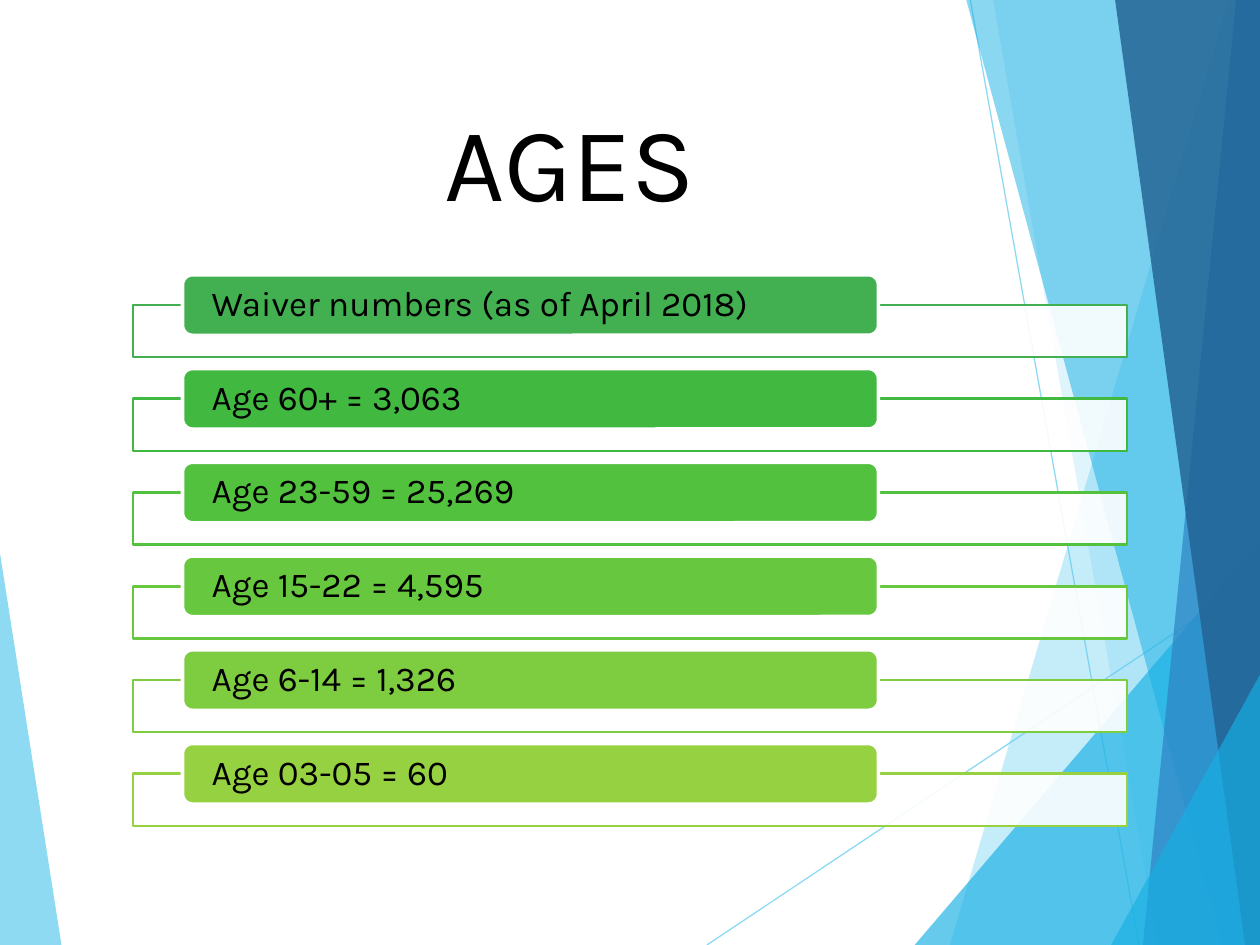
from lxml.etree import SubElement
from pptx import Presentation
from pptx.dml.color import RGBColor
from pptx.enum.shapes import MSO_CONNECTOR, MSO_SHAPE
from pptx.enum.text import MSO_ANCHOR, PP_ALIGN
from pptx.oxml.ns import qn
from pptx.util import Cm, Pt

WHITE = RGBColor(0xFF, 0xFF, 0xFF)
BLACK = RGBColor(0x00, 0x00, 0x00)
SKY = RGBColor(0x5F, 0xCB, 0xEF)
CYAN = RGBColor(0x17, 0xB0, 0xE4)
BLUE = RGBColor(0x2E, 0x83, 0xC3)
NAVY = RGBColor(0x22, 0x62, 0x92)

RIGHT, BOTTOM = 25.4, 19.05
ROW_STEP = 1.89

AGE_ROWS = [
    ("Waiver numbers (as of April 2018)", RGBColor(0x42, 0xB0, 0x51)),
    ("Age 60+ = 3,063", RGBColor(0x41, 0xB9, 0x40)),
    ("Age 23-59 = 25,269", RGBColor(0x52, 0xC1, 0x3E)),
    ("Age 15-22 = 4,595", RGBColor(0x67, 0xC7, 0x3E)),
    ("Age 6-14 = 1,326", RGBColor(0x7E, 0xCC, 0x40)),
    ("Age 03-05 = 60", RGBColor(0x96, 0xD1, 0x41)),
]


def set_opacity(color_format, percent):
    color = color_format._xFill.find(qn("a:srgbClr"))
    SubElement(color, qn("a:alpha")).set("val", str(percent * 1000))


def paint(shape, color, opacity=100, outline=None, weight=1):
    shape.shadow.inherit = False
    shape.fill.solid()
    shape.fill.fore_color.rgb = color
    if opacity < 100:
        set_opacity(shape.fill.fore_color, opacity)
    if outline is None:
        shape.line.fill.background()
    else:
        shape.line.color.rgb = outline
        shape.line.width = Pt(weight)


def write_text(shape, text, size, left_inset, right_inset, spacing=1.0):
    frame = shape.text_frame
    frame.word_wrap = True
    frame.vertical_anchor = MSO_ANCHOR.MIDDLE
    frame.margin_left, frame.margin_right = Cm(left_inset), Cm(right_inset)
    frame.margin_top = frame.margin_bottom = 0
    paragraph = frame.paragraphs[0]
    paragraph.alignment = PP_ALIGN.LEFT
    paragraph.line_spacing = spacing
    run = paragraph.add_run()
    run.text = text
    run.font.name = "Karla"
    run.font.size = Pt(size)
    run.font.color.rgb = BLACK


def add_facet(slide, corners, color, opacity):
    start, *others = [(Cm(x), Cm(y)) for x, y in corners]
    outline = slide.shapes.build_freeform(*start)
    outline.add_line_segments(others, close=True)
    paint(outline.convert_to_shape(), color, opacity)


def add_band(slide, top_x, bottom_x, color, opacity):
    corners = [(top_x, 0), (bottom_x, BOTTOM), (RIGHT, BOTTOM), (RIGHT, 0)]
    add_facet(slide, corners, color, opacity)


def add_corner(slide, bottom_x, right_y, color, opacity):
    corners = [(bottom_x, BOTTOM), (RIGHT, right_y), (RIGHT, BOTTOM)]
    add_facet(slide, corners, color, opacity)


def add_ray(slide, x1, y1, x2, y2):
    ray = slide.shapes.add_connector(
        MSO_CONNECTOR.STRAIGHT, Cm(x1), Cm(y1), Cm(x2), Cm(y2)
    )
    ray.line.color.rgb = SKY
    ray.line.width = Pt(0.75)
    set_opacity(ray.line.color, 70)
    SubElement(ray._element.spPr, qn("a:effectLst"))


def add_backdrop(slide):
    add_facet(slide, [(0, 11.15), (1.24, BOTTOM), (0, BOTTOM)], SKY, 70)
    add_ray(slide, 14.25, BOTTOM, RIGHT, 11.61)
    add_ray(slide, 19.56, 0, 22.96, BOTTOM)
    add_band(slide, 24.77, 19.15, SKY, 36)
    add_band(slide, 20.02, 23.34, SKY, 20)
    add_corner(slide, 18.44, 10.9, CYAN, 66)
    add_band(slide, 19.48, 24.64, CYAN, 50)
    add_band(slide, 24.92, 23.04, BLUE, 70)
    add_band(slide, 22.48, 25.1, NAVY, 82)
    add_corner(slide, 22.4, 13.6, CYAN, 66)


def add_title(slide, text):
    title = slide.shapes.title
    title.left, title.top = Cm(2.69), Cm(1.7)
    title.width, title.height = Cm(21.23), Cm(3.05)
    write_text(title, text, size=60, left_inset=6.27, right_inset=0.25)


def add_age_row(slide, index, label, color):
    offset = index * ROW_STEP
    frame = slide.shapes.add_shape(
        MSO_SHAPE.RECTANGLE, Cm(2.68), Cm(6.15 + offset), Cm(20.04), Cm(1.05)
    )
    paint(frame, WHITE, opacity=90, outline=color, weight=1.5)
    pill = slide.shapes.add_shape(
        MSO_SHAPE.ROUNDED_RECTANGLE, Cm(3.68), Cm(5.54 + offset), Cm(14.03), Cm(1.22)
    )
    paint(pill, color, outline=WHITE, weight=2)
    write_text(pill, label, size=20, left_inset=0.53, right_inset=0.53, spacing=0.9)


def main():
    deck = Presentation()
    deck.slide_width, deck.slide_height = Cm(RIGHT), Cm(BOTTOM)
    slide = deck.slides.add_slide(deck.slide_layouts[5])
    add_backdrop(slide)
    add_title(slide, "AGES")
    for index, (label, color) in enumerate(AGE_ROWS):
        add_age_row(slide, index, label, color)
    deck.save("out.pptx")


if __name__ == "__main__":
    main()
